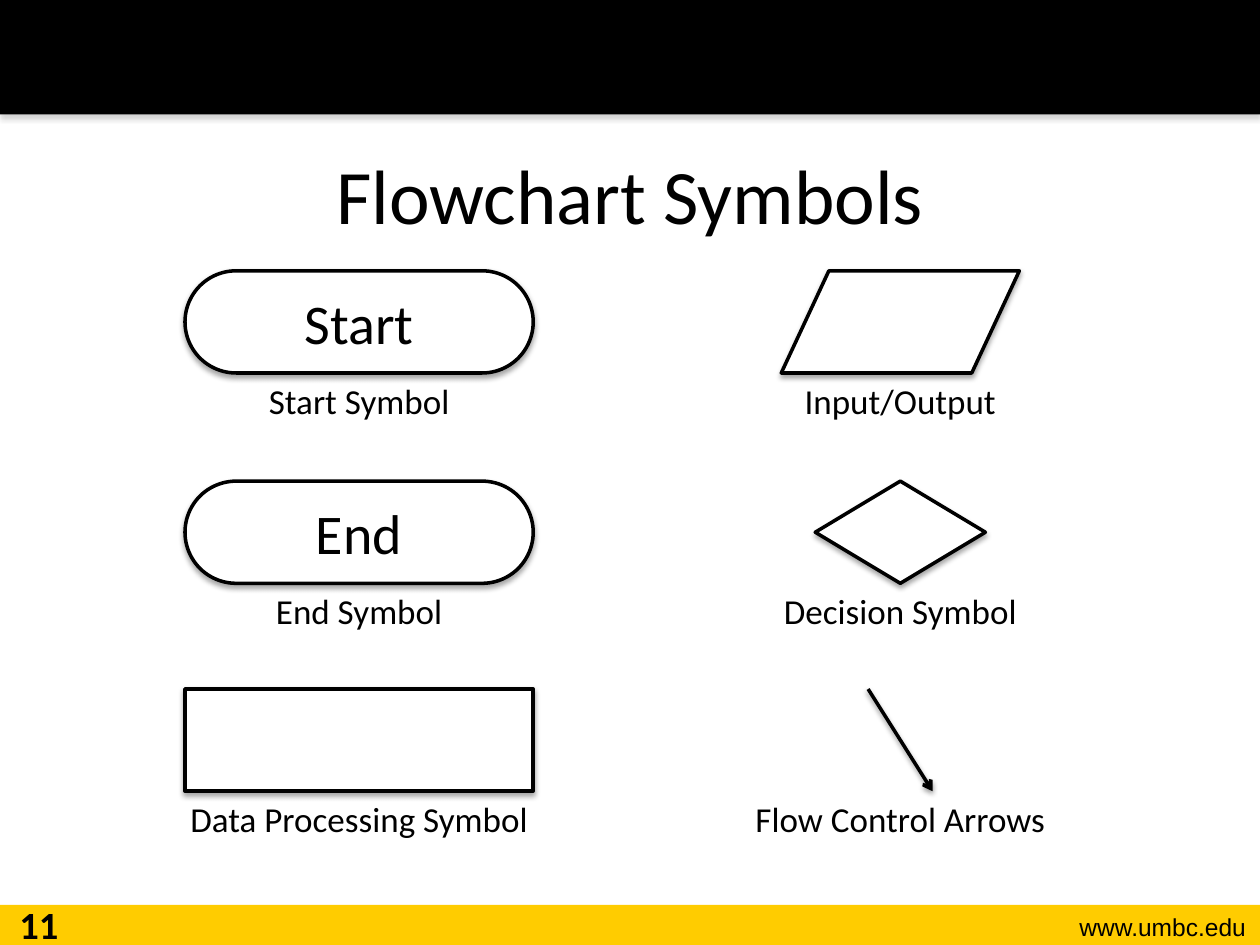
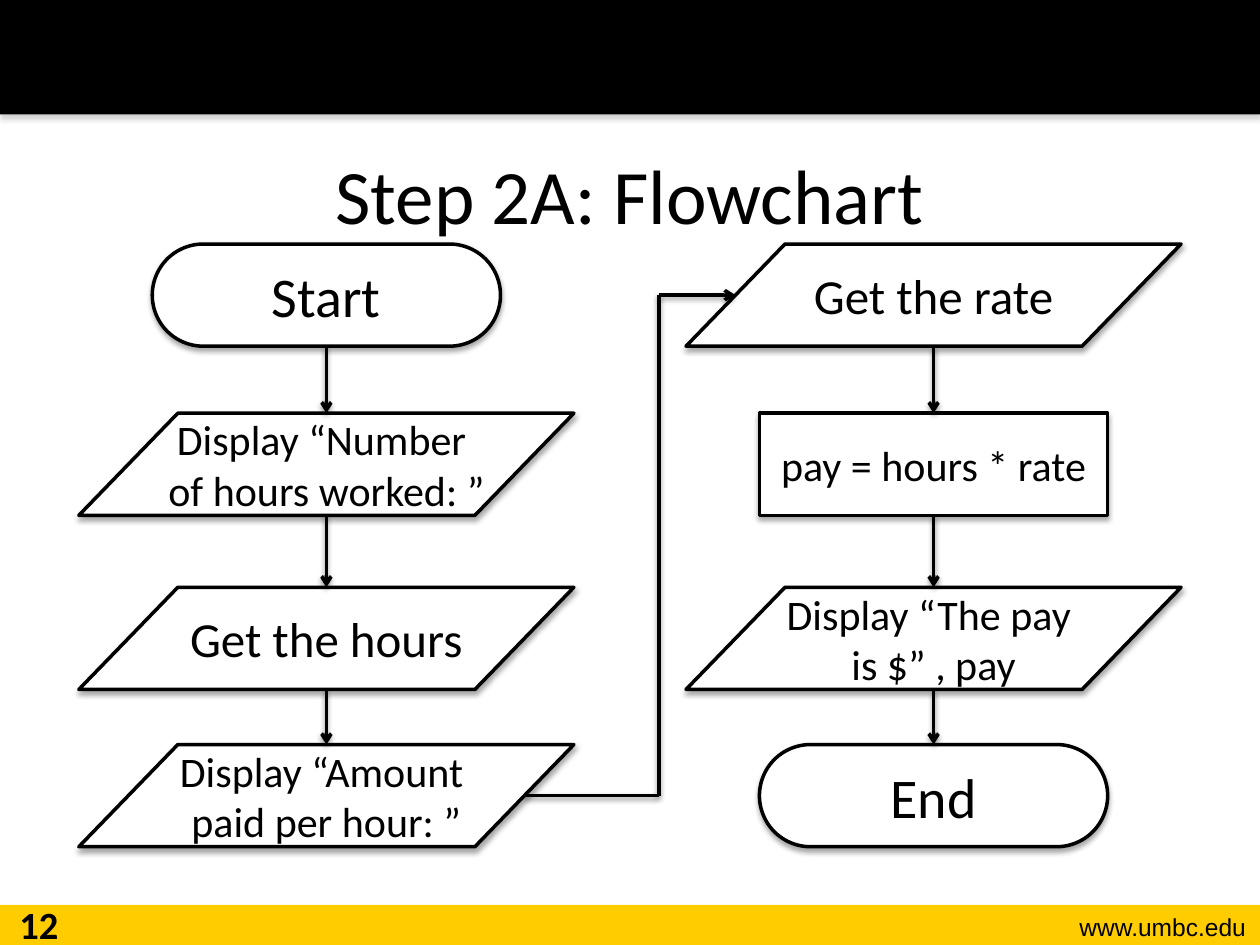
import lxml.etree
import pptx
import pptx.dml.color
import pptx.enum.shapes
import pptx.enum.text
import pptx.oxml.ns
import pptx.util
from pptx.util import Cm, Pt

Shapes = pptx.enum.shapes.MSO_SHAPE
Align = pptx.enum.text.PP_ALIGN
Anchor = pptx.enum.text.MSO_ANCHOR
qn = pptx.oxml.ns.qn

# Shared look, lengths in centimetres
BLACK, WHITE, GOLD, GREY = "000000", "FFFFFF", "FFCC00", "808080"
PAGE_WIDTH, PAGE_HEIGHT = 25.4, 19.05
BAND_HEIGHT, FOOTER_HEIGHT = 2.31, 0.81
SYMBOL_HEIGHT = 2.06
BOX_WIDTH = 7.02
LINE_WIDTH = Pt(2)

TITLE = {"name": "Calibri", "size": Pt(44)}
PAGE_NUMBER = {"name": "Calibri", "size": Pt(22), "bold": True}
ADDRESS = {"name": "Arial", "size": Pt(14)}
CAPTION = {"name": "Calibri", "size": Pt(20)}
TERMINAL = {"name": "Calibri", "size": Pt(32)}
INPUT = {"name": "Calibri", "size": Pt(28)}
STEP = {"name": "Calibri", "size": Pt(24)}


def color(hex_string):
    return pptx.dml.color.RGBColor.from_string(hex_string)


def set_values(target, values):
    for name, value in values.items():
        setattr(target, name, value)


def write(text_frame, text, style, align=Align.CENTER, anchor=Anchor.TOP, wrap=True):
    set_values(text_frame, {"word_wrap": wrap, "vertical_anchor": anchor})
    paragraph = text_frame.paragraphs[0]
    paragraph.text = text
    paragraph.alignment = align
    for run in paragraph.runs:
        set_values(run.font, style)
        run.font.color.rgb = color(BLACK)


def add_shadow(shape, hex_string=BLACK, opacity=35, distance=1.8):
    properties = shape._element.spPr
    effects = properties.find(qn("a:effectLst"))
    if effects is None:
        effects = lxml.etree.SubElement(properties, qn("a:effectLst"))
    shadow = lxml.etree.SubElement(
        effects, qn("a:outerShdw"), blurRad=str(Pt(3.1)), dist=str(Pt(distance)),
        dir="5400000", rotWithShape="0")
    tint = lxml.etree.SubElement(shadow, qn("a:srgbClr"), val=hex_string)
    lxml.etree.SubElement(tint, qn("a:alpha"), val=str(opacity * 1000))


def add_text(slide, left, top, width, height, text, style, **options):
    box = slide.shapes.add_textbox(Cm(left), Cm(top), Cm(width), Cm(height))
    write(box.text_frame, text, style, **options)


def add_band(slide, top, height, fill):
    band = slide.shapes.add_shape(
        Shapes.RECTANGLE, 0, Cm(top), Cm(PAGE_WIDTH), Cm(height))
    band.shadow.inherit = False
    band.fill.solid()
    band.fill.fore_color.rgb = color(fill)
    band.line.fill.background()
    return band


def add_symbol(slide, kind, center, top, width, text="", style=STEP):
    """Draw a flowchart symbol centred on a column."""
    symbol = slide.shapes.add_shape(
        kind, Cm(center - width / 2), Cm(top), Cm(width), Cm(SYMBOL_HEIGHT))
    if kind == Shapes.ROUNDED_RECTANGLE:
        symbol.adjustments[0] = 0.5
    symbol.shadow.inherit = False
    symbol.fill.solid()
    symbol.fill.fore_color.rgb = color(WHITE)
    symbol.line.color.rgb = color(BLACK)
    symbol.line.width = LINE_WIDTH
    add_shadow(symbol)
    if text:
        write(symbol.text_frame, text, style, anchor=Anchor.MIDDLE,
              wrap=kind != Shapes.FLOWCHART_DATA)
    return symbol


def add_line(slide, start, end, arrow=True):
    connector = slide.shapes.add_connector(
        pptx.enum.shapes.MSO_CONNECTOR.STRAIGHT, *map(Cm, start + end))
    connector.line.color.rgb = color(BLACK)
    connector.line.width = LINE_WIDTH
    if arrow:
        outline = connector._element.spPr.find(qn("a:ln"))
        lxml.etree.SubElement(outline, qn("a:tailEnd"), type="arrow")
    add_shadow(connector, opacity=38, distance=1.6)
    return connector


def add_page(presentation, title, number):
    slide = presentation.slides.add_slide(presentation.slide_layouts[6])
    add_band(slide, PAGE_HEIGHT - FOOTER_HEIGHT, FOOTER_HEIGHT, GOLD)
    add_shadow(add_band(slide, 0, BAND_HEIGHT, BLACK), GREY)
    add_text(slide, 20.32, 18.26, 5.05, 0.86, "www.umbc.edu", ADDRESS, align=Align.RIGHT)
    add_text(slide, 1.27, BAND_HEIGHT, 22.86, 3.18, title, TITLE, anchor=Anchor.MIDDLE)
    add_text(slide, 0, 18.03, 1.57, 1.02, str(number), PAGE_NUMBER)
    return slide


def add_legend(slide):
    """Two columns of symbols, each with a caption under it."""
    left, right = 7.24, 18.15
    rows = (5.46, 9.7, 13.89)
    symbols = (
        (Shapes.ROUNDED_RECTANGLE, left, rows[0], BOX_WIDTH, "Start", "Start Symbol"),
        (Shapes.ROUNDED_RECTANGLE, left, rows[1], BOX_WIDTH, "End", "End Symbol"),
        (Shapes.RECTANGLE, left, rows[2], BOX_WIDTH, "", "Data Processing Symbol"),
        (Shapes.FLOWCHART_DATA, right, rows[0], 4.8, "", "Input/Output"),
        (Shapes.DIAMOND, right, rows[1], 3.43, "", "Decision Symbol"),
        (None, right, rows[2], 1.3, "", "Flow Control Arrows"),
    )
    caption_width = 7.98
    for kind, center, top, width, text, caption in symbols:
        bottom = top + SYMBOL_HEIGHT
        if kind is None:
            add_line(slide, (center - width / 2, top), (center + width / 2, bottom))
        else:
            add_symbol(slide, kind, center, top, width, text, TERMINAL)
        add_text(slide, center - caption_width / 2, bottom, caption_width, 1.12,
                 caption, CAPTION)


def add_flow(slide, center, rows, steps):
    """Stack the steps of one column and join each to the next."""
    previous = None
    for top, (kind, width, text, style) in zip(rows, steps):
        symbol = add_symbol(slide, kind, center, top, width, text, style)
        if previous:
            previous_symbol, previous_kind, bottom = previous
            arrow = add_line(slide, (center, bottom), (center, top))
            # The slanted symbol numbers its connection points differently
            if previous_kind != Shapes.FLOWCHART_DATA:
                arrow.begin_connect(previous_symbol, 2)
            if kind != Shapes.FLOWCHART_DATA:
                arrow.end_connect(symbol, 0)
        previous = symbol, kind, top + SYMBOL_HEIGHT


def add_pay_flowchart(slide):
    left, right = 6.58, 18.82
    rows = (4.92, 8.33, 11.84, 15.01)
    data_width = 9.98
    data = Shapes.FLOWCHART_DATA, data_width
    terminal = Shapes.ROUNDED_RECTANGLE, BOX_WIDTH
    add_flow(slide, left, rows, (
        (*terminal, "Start", TERMINAL),
        (*data, "Display “Number \nof hours worked: ”", STEP),
        (*data, "Get the hours", INPUT),
        (*data, "Display “Amount \npaid per hour: ”", STEP),
    ))
    add_flow(slide, right, rows, (
        (*data, "Get the rate", INPUT),
        (Shapes.RECTANGLE, BOX_WIDTH, "pay = hours * rate", STEP),
        (*data, "Display “The pay \nis $” , pay", STEP),
        (*terminal, "End", TERMINAL),
    ))

    # Route from the foot of the left column to the head of the right one
    channel = 13.28
    side = 0.4 * data_width
    head, foot = (top + SYMBOL_HEIGHT / 2 for top in (rows[0], rows[-1]))
    add_line(slide, (channel, head), (right - side, head))
    add_line(slide, (left + side, foot), (channel, foot), arrow=False)
    add_line(slide, (channel, head), (channel, foot), arrow=False)


def main():
    presentation = pptx.Presentation()
    set_values(presentation, {
        "slide_width": Cm(PAGE_WIDTH), "slide_height": Cm(PAGE_HEIGHT)})
    add_legend(add_page(presentation, "Flowchart Symbols", 11))
    add_pay_flowchart(add_page(presentation, "Step 2A: Flowchart", 12))
    presentation.save("out.pptx")


if __name__ == "__main__":
    main()
